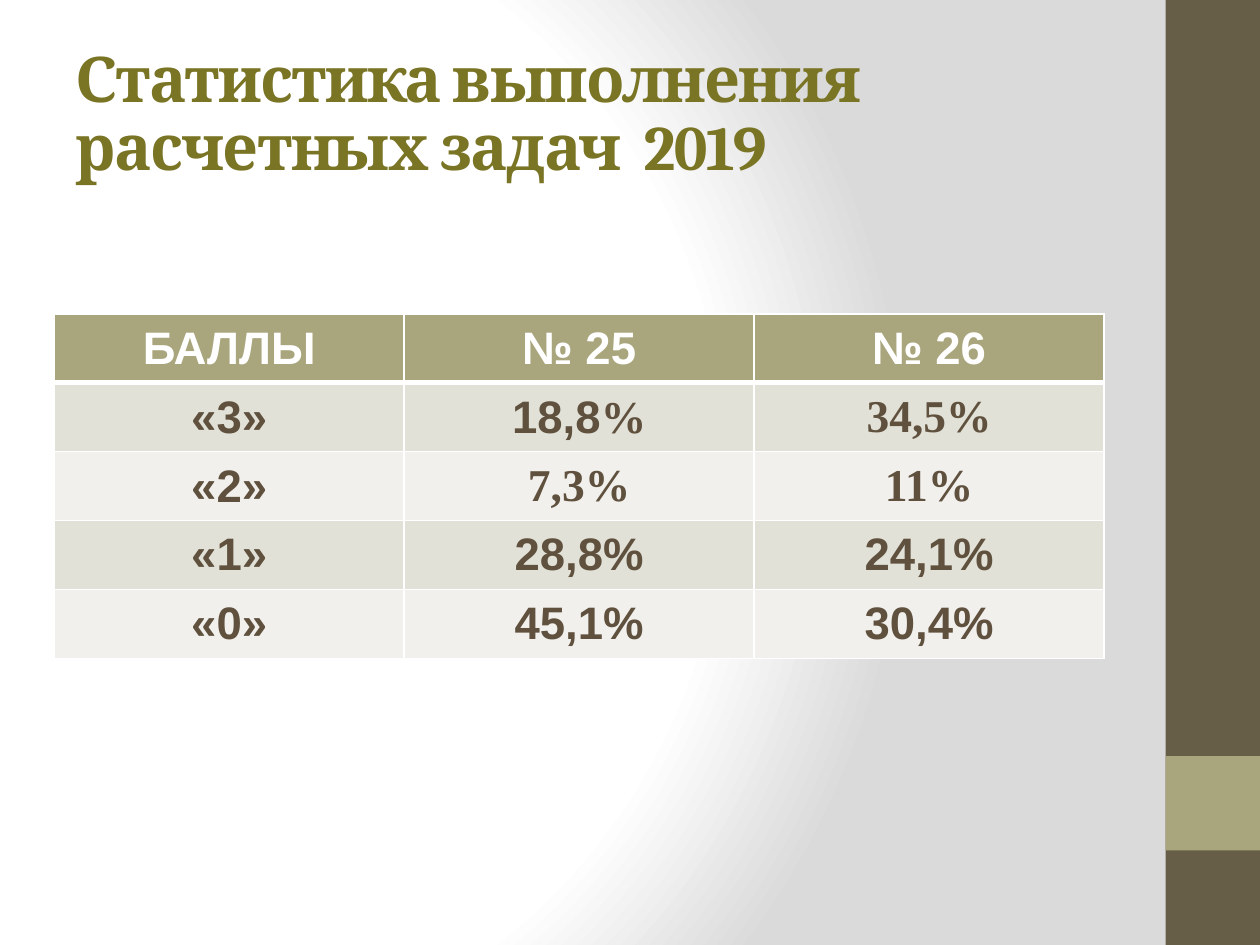
from lxml.etree import SubElement, fromstring
from pptx import Presentation
from pptx.dml.color import RGBColor
from pptx.enum.shapes import MSO_SHAPE
from pptx.enum.text import MSO_ANCHOR, PP_ALIGN
from pptx.oxml.ns import qn
from pptx.util import Pt

WHITE = RGBColor(0xFF, 0xFF, 0xFF)
GREY = RGBColor(0xDA, 0xDA, 0xDA)
BROWN = RGBColor(0x67, 0x5E, 0x47)
SAGE = RGBColor(0xA9, 0xA5, 0x7C)
OLIVE = RGBColor(0x7A, 0x74, 0x25)
INK = RGBColor(0x5F, 0x51, 0x3E)
BANDS = RGBColor(0xF1, 0xF0, 0xEC), RGBColor(0xE2, 0xE1, 0xD7)

SANS, SERIF = "Arial", "Times New Roman"
TITLE = "Статистика выполнения расчетных задач  2019"
# A cell is plain text in the sans face, or a list of (text, face) runs.
ROWS = [
    ["БАЛЛЫ", "№ 25", "№ 26"],
    ["«3»", [("18,8", SANS), ("%", SERIF)], [("34,5%", SERIF)]],
    ["«2»", [("7,3%", SERIF)], [("11%", SERIF)]],
    ["«1»", "28,8%", "24,1%"],
    ["«0»", "45,1%", "30,4%"],
]
BARS = [(0, 540, BROWN), (432, 54, SAGE)]
STOPS = [(0, WHITE), (75, WHITE), (100, GREY)]
CELL = {"margin_left": Pt(7.2), "margin_right": Pt(7.2),
        "margin_top": Pt(8.64), "margin_bottom": Pt(3.6)}


def set_back(slide):
    stops = "".join(f'<a:gs pos="{pos * 1000}"><a:srgbClr val="{tone}"/></a:gs>'
                    for pos, tone in STOPS)
    back = fromstring(
        '<p:bg xmlns:p="http://schemas.openxmlformats.org/presentationml/2006/main" '
        'xmlns:a="http://schemas.openxmlformats.org/drawingml/2006/main">'
        f'<p:bgPr><a:gradFill rotWithShape="1"><a:gsLst>{stops}</a:gsLst>'
        '<a:path path="circle"><a:fillToRect l="20000" t="50000" r="100000" b="50000"/>'
        '</a:path></a:gradFill><a:effectLst/></p:bgPr></p:bg>')
    slide.element.find(qn("p:cSld")).insert(0, back)


def add_run(para, text, face, size, tone):
    run = para.add_run()
    run.text = text
    form = {"name": face, "size": Pt(size), "bold": True}
    for key, val in form.items():
        setattr(run.font, key, val)
    run.font.color.rgb = tone
    return run


def set_edges(cell, head):
    """Draw the cell borders; they must precede the fill in the XML."""
    props = cell._tc.get_or_add_tcPr()
    for side in "LRTB":
        wide = 3 if head and side == "B" else 1
        line = SubElement(props, qn(f"a:ln{side}"), w=str(Pt(wide)))
        fill = SubElement(line, qn("a:solidFill"))
        SubElement(fill, qn("a:srgbClr"), val=str(WHITE))


def fill_cell(cell, item, row):
    head = row == 0
    set_edges(cell, head)
    cell.fill.solid()
    cell.fill.fore_color.rgb = SAGE if head else BANDS[row % 2]
    for key, val in CELL.items():
        setattr(cell, key, val)
    para = cell.text_frame.paragraphs[0]
    para.alignment = PP_ALIGN.CENTER
    para.line_spacing = 0.87
    for text, face in [(item, SANS)] if isinstance(item, str) else item:
        add_run(para, text, face, 26, WHITE if head else INK)


def add_bars(slide):
    for top, high, tone in BARS:
        bar = slide.shapes.add_shape(MSO_SHAPE.RECTANGLE, Pt(666), Pt(top), Pt(54), Pt(high))
        bar.shadow.inherit = False
        bar.fill.solid()
        bar.fill.fore_color.rgb = tone
        bar.line.fill.background()


def add_title(slide):
    frame = slide.shapes.add_textbox(Pt(36), Pt(21.6), Pt(600), Pt(90)).text_frame
    frame.word_wrap = True
    frame.vertical_anchor = MSO_ANCHOR.MIDDLE
    para = frame.paragraphs[0]
    para.line_spacing = 0.9
    run = add_run(para, TITLE, "Cambria", 36, OLIVE)
    run.font._element.set("spc", "-100")


def add_scores(slide):
    high = Pt(198.7)
    shape = slide.shapes.add_table(len(ROWS), len(ROWS[0]), Pt(31), Pt(179.3), Pt(600), high)
    table = shape.table
    for r, row in enumerate(ROWS):
        table.rows[r].height = Pt(29.5)
        for c, item in enumerate(row):
            fill_cell(table.cell(r, c), item, r)
    shape.height = high


def main():
    deck = Presentation()
    deck.slide_width, deck.slide_height = Pt(720), Pt(540)
    slide = deck.slides.add_slide(deck.slide_layouts[6])
    set_back(slide)
    add_bars(slide)
    add_title(slide)
    add_scores(slide)
    deck.save("out.pptx")


if __name__ == "__main__":
    main()
